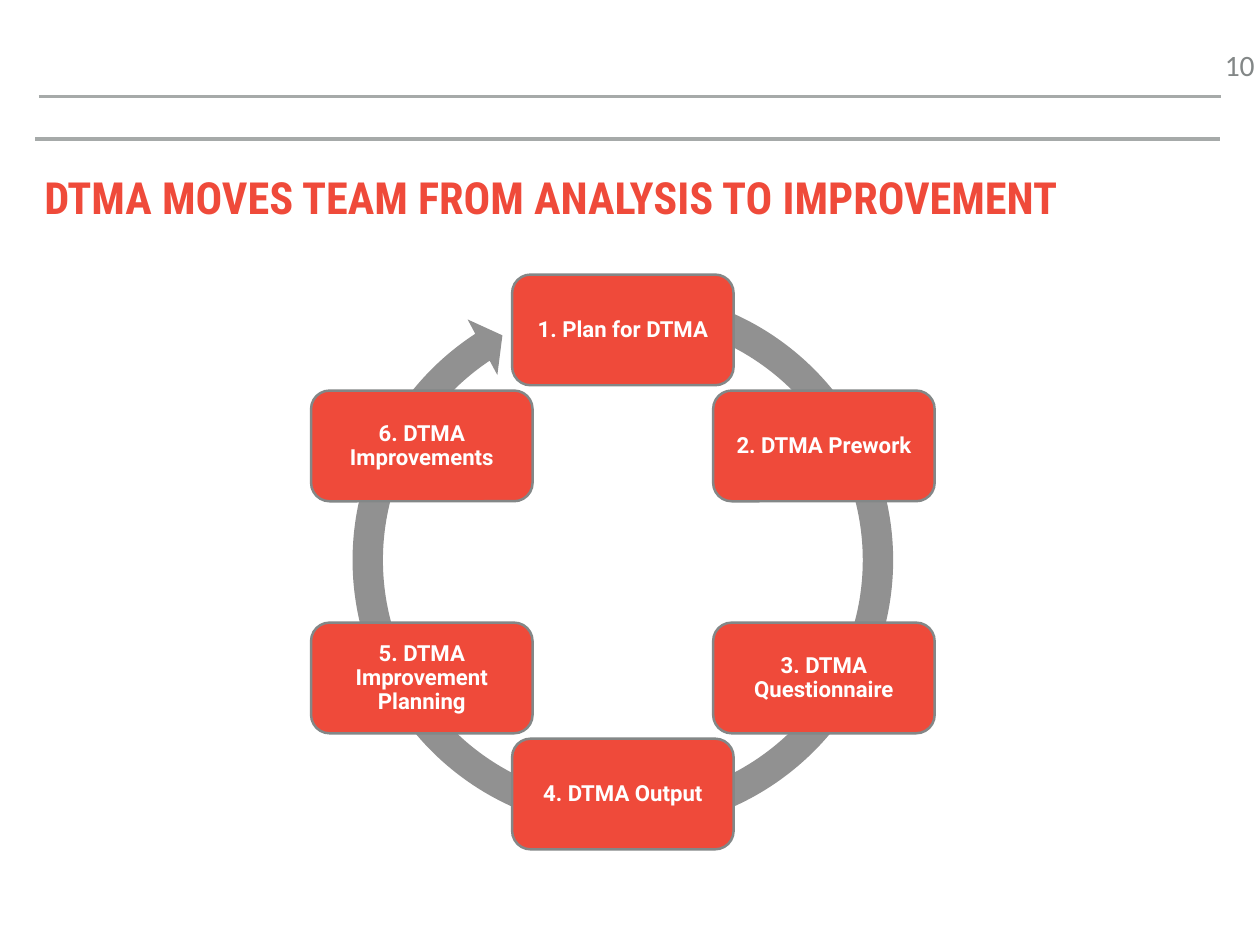
from math import cos, radians, sin

from lxml import etree
from pptx import Presentation
from pptx.dml.color import RGBColor
from pptx.enum.shapes import MSO_CONNECTOR, MSO_SHAPE
from pptx.enum.text import MSO_ANCHOR, PP_ALIGN
from pptx.oxml.ns import qn
from pptx.util import Pt

PX = 9144  # EMU per px, 100 px to the inch
COLORS = {
    "accent": "EF4A3A",
    "rule": "A6AAA9",
    "ring": "919191",
    "grey": "838787",
    "white": "FFFFFF",
}
STEPS = [
    "1. Plan for DTMA",
    "2. DTMA Prework",
    "3. DTMA Questionnaire",
    "4. DTMA Output",
    "5. DTMA Improvement Planning",
    "6. DTMA Improvements",
]


def color(name):
    return RGBColor.from_string(COLORS[name])


def emu(*lengths):
    return [round(length * PX) for length in lengths]


def write(frame, text, font, size, tint, bold, align, spacing, inset):
    frame.word_wrap = True
    frame.margin_left = frame.margin_right = inset * PX
    frame.margin_top = frame.margin_bottom = inset * PX
    frame.text = text
    para = frame.paragraphs[0]
    para.alignment = align
    para.line_spacing = spacing
    span = para.runs[0]
    span.font.name = font
    span.font.size = Pt(size)
    span.font.bold = bold
    span.font.color.rgb = color(tint)


def add_rule(page, left, right, y, weight):
    rule = page.shapes.add_connector(MSO_CONNECTOR.STRAIGHT, *emu(left, y, right, y))
    rule.line.color.rgb = color("rule")
    rule.line.width = Pt(weight)
    etree.SubElement(rule._element.spPr, qn("a:effectLst"))


def add_filled(page, kind, box, fill):
    shape = page.shapes.add_shape(kind, *emu(*box))
    shape.shadow.inherit = False
    shape.fill.solid()
    shape.fill.fore_color.rgb = color(fill)
    return shape


def add_header(page, left, top, width, height):
    """Two rules, with the page number beyond their right end."""
    right = left + width
    add_rule(page, left + 4, right + 1, top + 62, 2)
    add_rule(page, left, right, top + height, 3)
    number = page.shapes.add_textbox(*emu(right + 2, top, 43, 44))
    write(number.text_frame, "10", "Calibri", 24, "grey", False,
          PP_ALIGN.RIGHT, 1.0, 6)
    number.text_frame.margin_left = 0  # room for both digits on one line


def add_title(page, *box):
    title = page.shapes.add_textbox(*emu(*box))
    write(title.text_frame, "DTMA MOVES TEAM FROM ANALYSIS TO IMPROVEMENT",
          "Roboto Condensed", 36, "accent", True, PP_ALIGN.LEFT, 0.8, 6)


def add_cycle(page, left, top, width, height):
    """Steps spread evenly clockwise from the top, over a circular arrow."""
    step_width, step_height, ring_size = 250, 125, 647
    center_x, center_y = left + width / 2, top + height / 2
    radius = (height - step_height) / 2

    ring_box = (center_x - ring_size / 2, top - 1, ring_size, ring_size)
    ring = add_filled(page, MSO_SHAPE.CIRCULAR_ARROW, ring_box, "ring")
    ring.line.fill.background()
    # thickness, head angle, end angle, start angle, head width
    for index, value in enumerate((5.3 / 100, 3.13, 141.97, 171.45, 5.5 / 100)):
        ring.adjustments[index] = value

    for index, text in enumerate(STEPS):
        angle = radians(360 / len(STEPS) * index)
        step_left = center_x + radius * sin(angle) - step_width / 2
        step_top = center_y - radius * cos(angle) - step_height / 2
        step = add_filled(page, MSO_SHAPE.ROUNDED_RECTANGLE,
                          (step_left, step_top, step_width, step_height), "accent")
        step.line.color.rgb = color("grey")
        step.line.width = Pt(2)
        step.text_frame.vertical_anchor = MSO_ANCHOR.MIDDLE
        write(step.text_frame, text, "Roboto", 18, "white", True,
              PP_ALIGN.CENTER, 0.9, 7)


def main():
    deck = Presentation()
    deck.slide_width, deck.slide_height = emu(1422, 1067)
    page = deck.slides.add_slide(deck.slide_layouts[6])
    add_header(page, 40, 47, 1337, 110)
    add_title(page, 44, 198, 1333, 60)
    add_cycle(page, 351, 310, 704, 649)
    deck.save("out.pptx")


if __name__ == "__main__":
    main()
